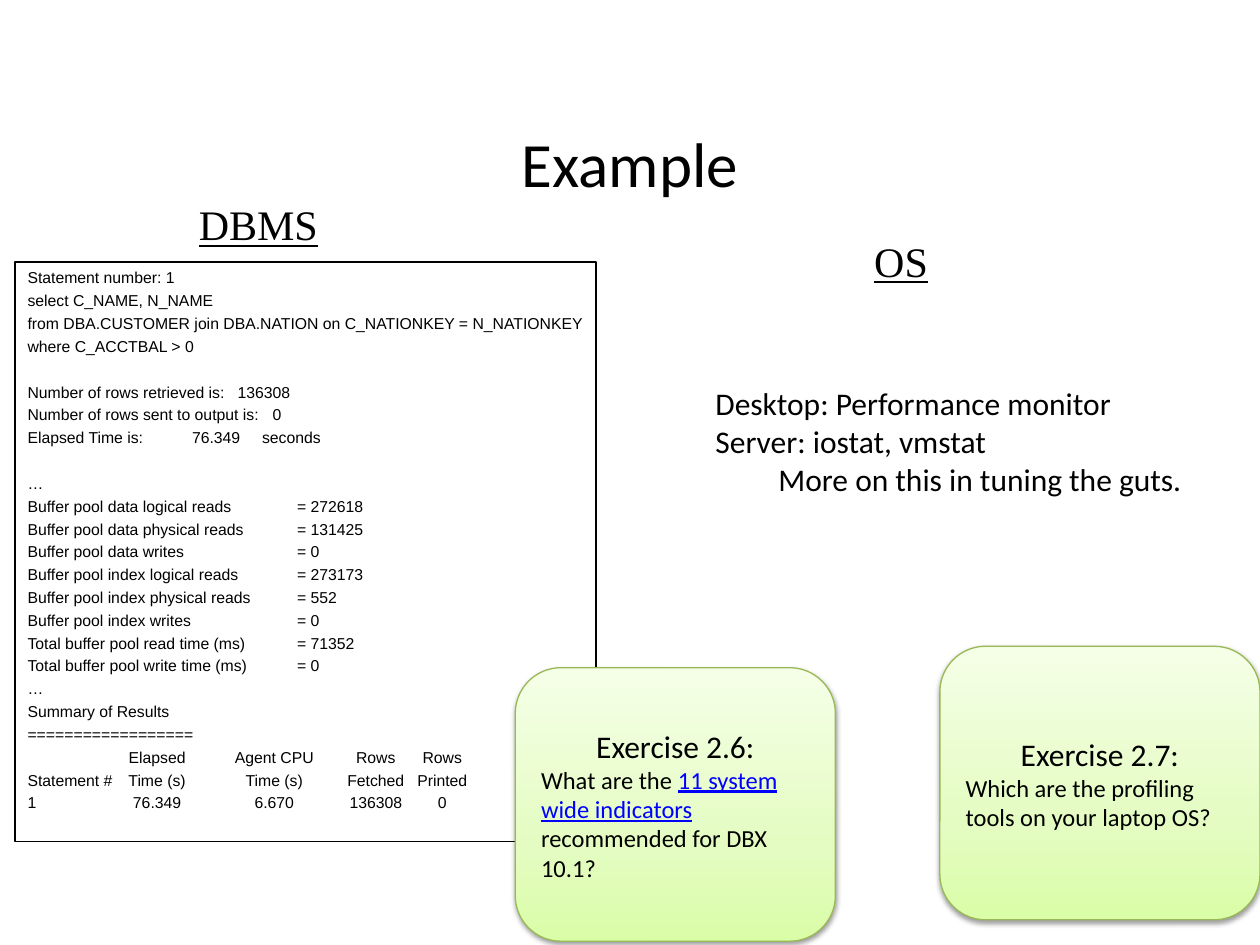
import copy

import pptx
import pptx.dml.color
import pptx.enum.shapes
import pptx.enum.text
import pptx.oxml
import pptx.oxml.ns
import pptx.util

Pt = pptx.util.Pt
RGBColor = pptx.dml.color.RGBColor
ALIGN = pptx.enum.text.PP_ALIGN
ANCHOR = pptx.enum.text.MSO_ANCHOR
SHAPE = pptx.enum.shapes.MSO_SHAPE
qn = pptx.oxml.ns.qn

BLACK = RGBColor(0x00, 0x00, 0x00)
WHITE = RGBColor(0xFF, 0xFF, 0xFF)
LINK_BLUE = RGBColor(0x00, 0x00, 0xFF)
CARD_EDGE = RGBColor(0x98, 0xB9, 0x55)
CARD_STOPS = [
    (0, RGBColor(0xDA, 0xFD, 0xA7)),
    (0.35, RGBColor(0xE4, 0xFC, 0xC2)),
    (1, RGBColor(0xF5, 0xFF, 0xE7)),
]

REPORT_SIZE = 9
REPORT_GAP = 2.2
SECTION_GAP = 15.25
COUNTER_TABS = [(154, "l")]
SUMMARY_TABS = [(74, "ctr"), (141, "ctr"), (199, "ctr"), (237, "ctr")]

# Each section: its lines and tab stops, and whether a line of space precedes it.
REPORT = [
    (["Statement number: 1",
      "select C_NAME, N_NAME",
      "from DBA.CUSTOMER join DBA.NATION on C_NATIONKEY = N_NATIONKEY",
      "where C_ACCTBAL > 0"], [], False),
    (["Number of rows retrieved is:\t136308"], [(120, "l")], True),
    (["Number of rows sent to output is:\t0"], [(140, "l")], False),
    (["Elapsed Time is:\t76.349\tseconds"], [(94, "l"), (134, "l")], False),
    (["…"], [], True),
    (["Buffer pool data logical reads\t= 272618",
      "Buffer pool data physical reads\t= 131425",
      "Buffer pool data writes\t= 0",
      "Buffer pool index logical reads\t= 273173",
      "Buffer pool index physical reads\t= 552",
      "Buffer pool index writes\t= 0",
      "Total buffer pool read time (ms)\t= 71352",
      "Total buffer pool write time (ms)\t= 0"], COUNTER_TABS, False),
    (["…", "Summary of Results", "=================="], [], False),
    (["\tElapsed\tAgent CPU\tRows\tRows",
      "Statement #\tTime (s)\tTime (s)\tFetched\tPrinted",
      "1\t76.349\t6.670\t136308\t0"], SUMMARY_TABS, False),
]


def add_tab_stops(paragraph, stops):
    properties = paragraph._p.get_or_add_pPr()
    tab_list = pptx.oxml.parse_xml(
        f'<a:tabLst {pptx.oxml.ns.nsdecls("a")}>'
        + "".join(f'<a:tab pos="{Pt(pos)}" algn="{kind}"/>' for pos, kind in stops)
        + "</a:tabLst>")
    properties.append(tab_list)


def write(paragraph, text, size=18, font="Calibri", color=BLACK, underline=False,
          align=ALIGN.LEFT, before=0, tabs=()):
    """Add one formatted run to the paragraph."""
    paragraph.alignment = align
    if before:
        paragraph.space_before = Pt(before)
    if tabs:
        add_tab_stops(paragraph, tabs)
    run = paragraph.add_run()
    run.text = text
    run.font.size = Pt(size)
    run.font.name = font
    run.font.color.rgb = color
    run.font.underline = underline


def add_text_box(slide, left, top, width, height, wrap=True, anchor=ANCHOR.TOP):
    frame = slide.shapes.add_textbox(Pt(left), Pt(top), Pt(width), Pt(height)).text_frame
    frame.word_wrap = wrap
    frame.vertical_anchor = anchor
    return frame


def add_outlined_shape(slide, kind, left, top, width, height, edge):
    shape = slide.shapes.add_shape(kind, Pt(left), Pt(top), Pt(width), Pt(height))
    shape.line.color.rgb = edge
    shape.line.width = Pt(0.75)
    shape.shadow.inherit = False
    return shape


def add_heading(slide, text, left, top, width):
    frame = add_text_box(slide, left, top, width, 36)
    write(frame.paragraphs[0], text, size=24, font="Times New Roman", underline=True)


def add_report(slide):
    box = add_outlined_shape(slide, SHAPE.RECTANGLE, 8.64, 149.76, 331.92, 331.2, BLACK)
    box.fill.solid()
    box.fill.fore_color.rgb = WHITE
    frame = box.text_frame
    frame.word_wrap = False
    frame.vertical_anchor = ANCHOR.TOP
    paragraph = frame.paragraphs[0]
    for section, (lines, tabs, spaced) in enumerate(REPORT):
        for index, line in enumerate(lines):
            if section or index:
                paragraph = frame.add_paragraph()
            gap = SECTION_GAP if spaced and index == 0 else REPORT_GAP
            write(paragraph, line, size=REPORT_SIZE, font="Arial", before=gap, tabs=tabs)


def fill_card(card):
    """Three-stop gradient, darkest at the bottom, with a soft shadow below."""
    card.fill.gradient()
    card.fill.gradient_angle = 90
    properties = card.element.spPr
    stop_list = properties.find(qn("a:gradFill")).find(qn("a:gsLst"))
    stop_list.append(copy.deepcopy(stop_list[0]))
    for stop, (position, color) in zip(card.fill.gradient_stops, CARD_STOPS):
        stop.position = position
        stop.color.rgb = color
    properties.find(qn("a:effectLst")).append(pptx.oxml.parse_xml(
        f'<a:outerShdw {pptx.oxml.ns.nsdecls("a")} blurRad="{Pt(3.1)}" '
        f'dist="{Pt(1.6)}" dir="5400000" rotWithShape="0">'
        '<a:srgbClr val="000000"><a:alpha val="38000"/></a:srgbClr></a:outerShdw>'))


def add_exercise(slide, left, top, title, question):
    card = add_outlined_shape(slide, SHAPE.ROUNDED_RECTANGLE, left, top, 182.88, 156.24,
                              CARD_EDGE)
    fill_card(card)
    frame = card.text_frame
    frame.word_wrap = True
    frame.vertical_anchor = ANCHOR.MIDDLE
    write(frame.paragraphs[0], title, align=ALIGN.CENTER)
    body = frame.add_paragraph()
    for text, linked in question:
        write(body, text, size=14, color=LINK_BLUE if linked else BLACK, underline=linked)


def add_os_tools(slide):
    frame = add_text_box(slide, 401.76, 216, 283.68, 72.72, wrap=False)
    write(frame.paragraphs[0], "Desktop: Performance monitor")
    write(frame.add_paragraph(), "Server: iostat, vmstat")
    write(frame.add_paragraph(), "\tMore on this in tuning the guts.", tabs=[(36, "l")])


def main():
    deck = pptx.Presentation()
    deck.slide_width, deck.slide_height = Pt(720), Pt(540)
    slide = deck.slides.add_slide(deck.slide_layouts[6])

    title = add_text_box(slide, 54, 46.08, 612, 93.6, anchor=ANCHOR.MIDDLE)
    write(title.paragraphs[0], "Example", size=36, align=ALIGN.CENTER)
    add_report(slide)
    add_heading(slide, "DBMS", 106.56, 110.16, 88)
    add_heading(slide, "OS", 492.48, 131.04, 50)
    add_exercise(slide, 537.12, 369.36, "Exercise 2.7:",
                 [("Which are the profiling tools on your laptop OS?", False)])
    add_exercise(slide, 294.48, 381.6, "Exercise 2.6:",
                 [("What are the ", False), ("11 system wide indicators ", True),
                  ("recommended for DBX 10.1?", False)])
    add_os_tools(slide)
    deck.save("out.pptx")


if __name__ == "__main__":
    main()
